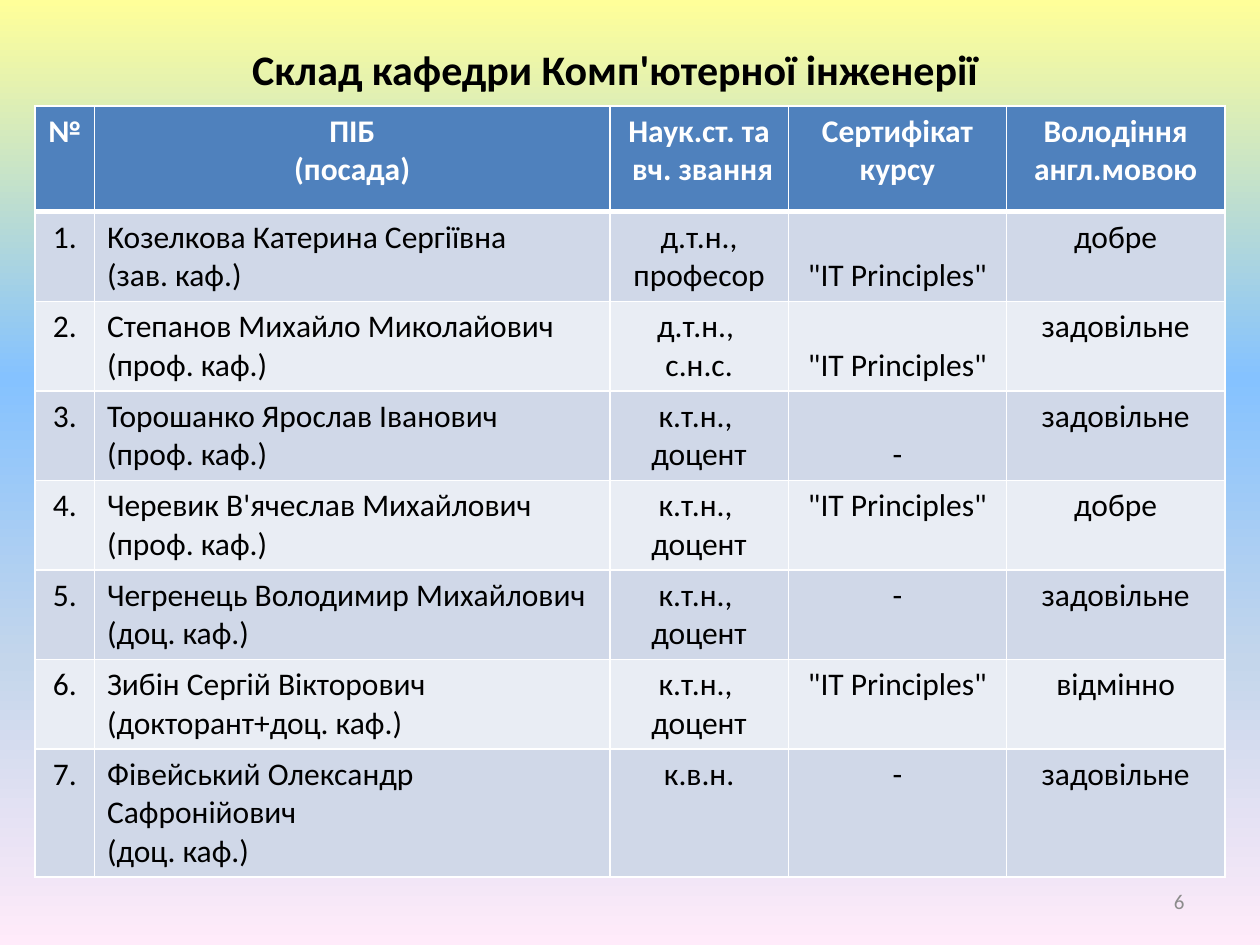
from lxml import etree
from pptx import Presentation
from pptx.dml.color import RGBColor
from pptx.enum.text import MSO_ANCHOR, MSO_AUTO_SIZE, PP_ALIGN
from pptx.oxml.ns import qn
from pptx.util import Pt

LEFT, CENTER, RIGHT = PP_ALIGN.LEFT, PP_ALIGN.CENTER, PP_ALIGN.RIGHT
TOP, MIDDLE, BOTTOM = MSO_ANCHOR.TOP, MSO_ANCHOR.MIDDLE, MSO_ANCHOR.BOTTOM
NO_AUTOFIT = MSO_AUTO_SIZE.NONE

BACKGROUND = [(0, "FFFF99"), (40, "85C2FF"), (70, "C4D6EB"), (100, "FFEBFA")]
COLUMN_WIDTHS = [34, 294.5, 102, 124.7, 124.7]
ROW_HEIGHTS = [60.5] + [50.4] * 6 + [72]
HEADER = ["№", "ПІБ\n(посада)", "Наук.ст. та\n вч. звання",
          "Сертифікат курсу", "Володіння англ.мовою"]
COURSE = '"IT Principles"'
DOCENT = "к.т.н., \nдоцент"
STAFF = [
    ("Козелкова Катерина Сергіївна", "зав. каф.", "д.т.н., професор", COURSE, "добре"),
    ("Степанов Михайло Миколайович", "проф. каф.", "д.т.н., \nс.н.с.", COURSE, "задовільне"),
    ("Торошанко Ярослав Іванович", "проф. каф.", DOCENT, "-", "задовільне"),
    ("Черевик В'ячеслав Михайлович", "проф. каф.", DOCENT, COURSE, "добре"),
    ("Чегренець Володимир Михайлович", "доц. каф.", DOCENT, "-", "задовільне"),
    ("Зибін Сергій Вікторович", "докторант+доц. каф.", DOCENT, COURSE, "відмінно"),
    ("Фівейський Олександр Сафронійович", "доц. каф.", "к.в.н.", "-", "задовільне"),
]
NAME_COLUMN, CERTIFICATE_COLUMN = 1, 3
LOW_CERTIFICATE_ROWS = (1, 2, 3)


def color(value):
    return RGBColor.from_string(value)


def write(frame, text, size=18, ink="000000", bold=False, align=CENTER, font="Calibri"):
    frame.word_wrap = True
    for index, line in enumerate(text.split("\n")):
        paragraph = frame.paragraphs[0] if index == 0 else frame.add_paragraph()
        paragraph.alignment = align
        run = paragraph.add_run()
        run.text = line
        run.font.name, run.font.size, run.font.bold = font, Pt(size), bold
        run.font.color.rgb = color(ink)


class Deck:
    """Holds the table style and the current slide."""

    header_fill, band_fills, line = "4F81BD", ("E9EDF4", "D0D8E8"), "FFFFFF"

    def __init__(self, presentation):
        self.slide = presentation.slides.add_slide(presentation.slide_layouts[5])

    def background(self, stops):
        fill = self.slide.background.fill
        fill.gradient()
        fill.gradient_angle = 270
        stop_list = self.slide.element.find(".//" + qn("a:gsLst"))
        for stop in list(stop_list):
            stop_list.remove(stop)
        for position, value in stops:
            stop = etree.SubElement(stop_list, qn("a:gs"), pos=str(position * 1000))
            etree.SubElement(stop, qn("a:srgbClr"), val=value)

    def title(self, text, left, top, width, height):
        shape = self.slide.shapes.title
        shape.left, shape.top, shape.width, shape.height = map(Pt, (left, top, width, height))
        shape.text_frame.auto_size = NO_AUTOFIT
        shape.text_frame.vertical_anchor = TOP
        write(shape.text_frame, text, size=24, bold=True)

    def page_number(self, text, left, top, width, height):
        shape = self.slide.shapes.add_textbox(*map(Pt, (left, top, width, height)))
        shape.text_frame.vertical_anchor = MIDDLE
        write(shape.text_frame, text, size=12, ink="8C8C8C", align=RIGHT)

    def borders(self, cell, top, bottom):
        properties = cell._tc.get_or_add_tcPr()
        for side, width in (("L", 1), ("R", 1), ("T", top), ("B", bottom)):
            border = etree.SubElement(properties, qn("a:ln" + side), w=str(Pt(width)))
            fill = etree.SubElement(border, qn("a:solidFill"))
            etree.SubElement(fill, qn("a:srgbClr"), val=self.line)

    def table(self, rows, left, top, widths, heights):
        frame = self.slide.shapes.add_table(
            len(rows), len(widths), Pt(left), Pt(top), Pt(sum(widths)), Pt(sum(heights)))
        table = frame.table
        table.horz_banding = False
        for column, width in zip(table.columns, widths):
            column.width = Pt(width)
        for row, height in zip(table.rows, heights):
            row.height = Pt(height)
        for row, texts in enumerate(rows):
            for column, text in enumerate(texts):
                self.cell(table.cell(row, column), text, row, column)

    def cell(self, cell, text, row, column):
        header = row == 0
        self.borders(cell, top=3 if row == 1 else 1, bottom=3 if header else 1)
        cell.fill.solid()
        cell.fill.fore_color.rgb = color(self.header_fill if header else self.band_fills[row % 2])
        low = column == CERTIFICATE_COLUMN and row in LOW_CERTIFICATE_ROWS
        cell.vertical_anchor = BOTTOM if low else TOP
        write(cell.text_frame, text, bold=header, ink="FFFFFF" if header else "000000",
              align=LEFT if column == NAME_COLUMN and not header else CENTER)


def main():
    presentation = Presentation()
    presentation.slide_width, presentation.slide_height = Pt(720), Pt(540)
    deck = Deck(presentation)
    deck.background(BACKGROUND)
    deck.title("Склад кафедри Комп'ютерної інженерії", 105, 21, 493, 36)
    rows = [HEADER] + [
        (f"{number}.", f"{name}\n({post})", degree, certificate, english)
        for number, (name, post, degree, certificate, english) in enumerate(STAFF, 1)]
    deck.table(rows, 20, 60.5, COLUMN_WIDTHS, ROW_HEIGHTS)
    deck.page_number("6", 516, 500.5, 168, 29)
    presentation.save("out.pptx")


if __name__ == "__main__":
    main()
